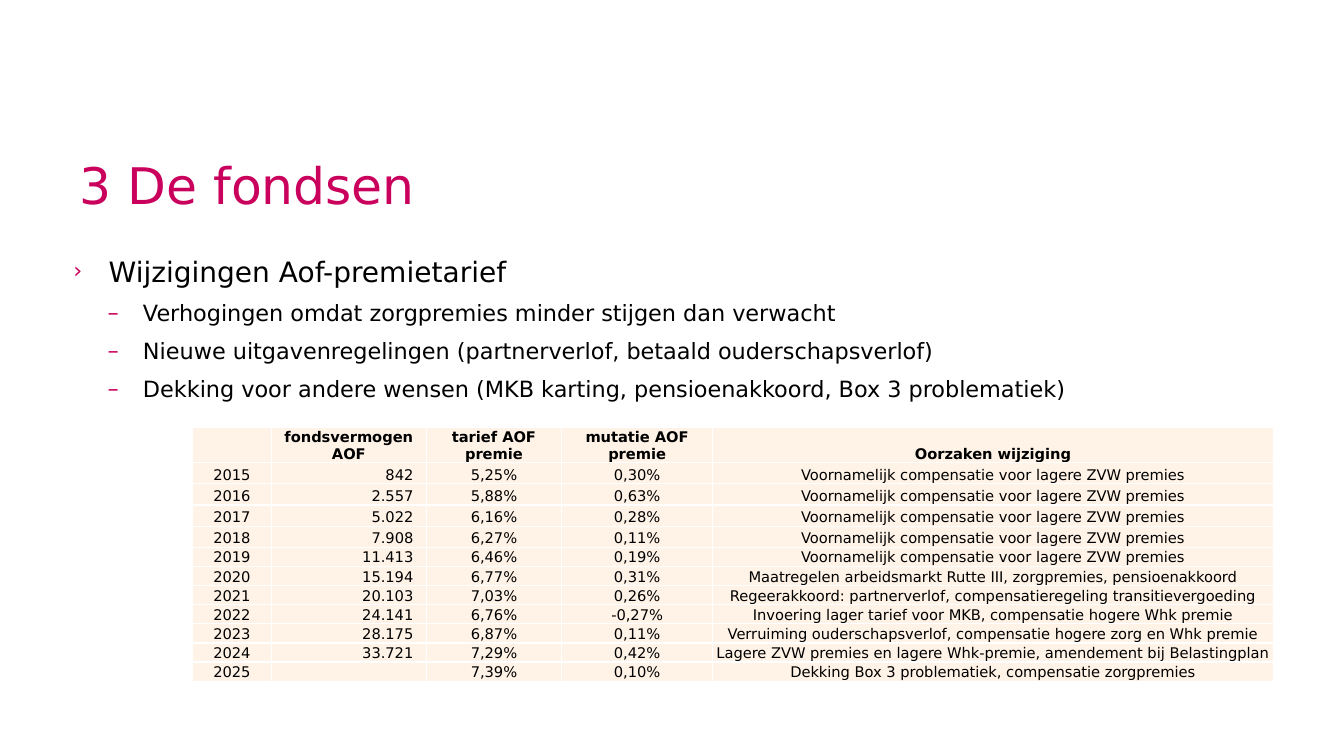
import lxml.etree
import pptx
import pptx.dml.color
import pptx.enum.text
import pptx.oxml.ns
import pptx.util
from pptx.util import Inches

FONT = "DejaVu Sans"
COLORS = {"accent": "CA005D", "text": "000000", "cell": "FFF3E7", "border": "FFFFFF"}
ALIGN = pptx.enum.text.PP_ALIGN
ANCHOR = pptx.enum.text.MSO_ANCHOR

# Text, indent level, size, space before
POINTS = [
    ("Wijzigingen Aof-premietarief", 0, 20, 0),
    ("Verhogingen omdat zorgpremies minder stijgen dan verwacht", 1, 16, 10),
    ("Nieuwe uitgavenregelingen (partnerverlof, betaald ouderschapsverlof)", 1, 16, 10),
    ("Dekking voor andere wensen (MKB karting, pensioenakkoord, Box 3 problematiek)", 1, 16, 10),
]
ZVW = "Voornamelijk compensatie voor lagere ZVW premies"
PREMIUMS = [
    ("", "fondsvermogen AOF", "tarief AOF premie", "mutatie AOF premie", "Oorzaken wijziging"),
    ("2015", "842", "5,25%", "0,30%", ZVW),
    ("2016", "2.557", "5,88%", "0,63%", ZVW),
    ("2017", "5.022", "6,16%", "0,28%", ZVW),
    ("2018", "7.908", "6,27%", "0,11%", ZVW),
    ("2019", "11.413", "6,46%", "0,19%", ZVW),
    ("2020", "15.194", "6,77%", "0,31%",
     "Maatregelen arbeidsmarkt Rutte III, zorgpremies, pensioenakkoord"),
    ("2021", "20.103", "7,03%", "0,26%",
     "Regeerakkoord: partnerverlof, compensatieregeling transitievergoeding"),
    ("2022", "24.141", "6,76%", "-0,27%",
     "Invoering lager tarief voor MKB, compensatie hogere Whk premie"),
    ("2023", "28.175", "6,87%", "0,11%",
     "Verruiming ouderschapsverlof, compensatie hogere zorg en Whk premie"),
    ("2024", "33.721", "7,29%", "0,42%",
     "Lagere ZVW premies en lagere Whk-premie, amendement bij Belastingplan"),
    ("2025", "", "7,39%", "0,10%", "Dekking Box 3 problematiek, compensatie zorgpremies"),
]
COLUMN_WIDTHS = [0.78, 1.54, 1.34, 1.5, 5.56]
ROW_HEIGHTS = [0.34] + [0.21] * 4 + [0.19] * 7
FUND_COLUMN = 1


def rgb(name):
    return pptx.dml.color.RGBColor.from_string(COLORS[name])


def add_xml(parent, tag, **attributes):
    element = lxml.etree.SubElement(parent, pptx.oxml.ns.qn(tag))
    for key, value in attributes.items():
        element.set(key, str(value))
    return element


def add_run(paragraph, text, size, color="text", bold=False):
    run = paragraph.add_run()
    run.text = text
    run.font.name = FONT
    run.font.size = pptx.util.Pt(size)
    run.font.bold = bold
    run.font.color.rgb = rgb(color)


def add_frame(slide, left, top, width, height, anchor):
    box = slide.shapes.add_textbox(Inches(left), Inches(top), Inches(width), Inches(height))
    frame = box.text_frame
    frame.word_wrap = True
    frame.vertical_anchor = anchor
    return frame


def add_title(slide, text):
    paragraph = add_frame(slide, 0.69, 1.15, 11.95, 1.04, ANCHOR.BOTTOM).paragraphs[0]
    paragraph.line_spacing = 0.9
    add_run(paragraph, text, 36, "accent")


def set_bullet(paragraph, level):
    properties = paragraph._p.get_or_add_pPr()
    properties.set("marL", str(Inches(0.35 + 0.34 * level)))
    properties.set("indent", str(Inches(-0.35)))
    color = add_xml(properties, "a:buClr")
    add_xml(color, "a:srgbClr", val=COLORS["accent"])
    add_xml(properties, "a:buSzPct", val=100000 if level else 80000)
    add_xml(properties, "a:buFont", typeface=FONT)
    add_xml(properties, "a:buChar", char="–" if level else "›")


def add_points(slide):
    frame = add_frame(slide, 0.63, 2.51, 12.14, 1.74, ANCHOR.TOP)
    for index, (text, level, size, space) in enumerate(POINTS):
        paragraph = frame.add_paragraph() if index else frame.paragraphs[0]
        paragraph.level = level
        set_bullet(paragraph, level)
        paragraph.line_spacing = 0.9
        paragraph.space_before = pptx.util.Pt(space)
        add_run(paragraph, text, size)


def set_borders(cell):
    """Put the border lines ahead of the fill, as the schema orders them."""
    properties = cell._tc.get_or_add_tcPr()
    for index, side in enumerate(("a:lnL", "a:lnR", "a:lnT", "a:lnB")):
        line = add_xml(properties, side, w=pptx.util.Pt(1))
        add_xml(add_xml(line, "a:solidFill"), "a:srgbClr", val=COLORS["border"])
        properties.insert(index, line)


def fill_cell(cell, text, is_header, is_amount):
    cell.fill.solid()
    cell.fill.fore_color.rgb = rgb("cell")
    set_borders(cell)
    cell.margin_left = cell.margin_right = cell.margin_top = cell.margin_bottom = 0
    cell.vertical_anchor = ANCHOR.BOTTOM
    paragraph = cell.text_frame.paragraphs[0]
    paragraph.alignment = ALIGN.CENTER
    if is_amount:
        paragraph.alignment = ALIGN.RIGHT
        cell.margin_right = Inches(0.13)
    if text:
        add_run(paragraph, text, 10.5, bold=is_header)
    else:
        add_xml(paragraph._p, "a:endParaRPr", sz=1050)


def add_premium_table(slide):
    table = slide.shapes.add_table(
        len(PREMIUMS), len(COLUMN_WIDTHS), Inches(1.91), Inches(4.24),
        Inches(sum(COLUMN_WIDTHS)), Inches(sum(ROW_HEIGHTS))).table
    for column, width in zip(table.columns, COLUMN_WIDTHS):
        column.width = Inches(width)
    for row, height in zip(table.rows, ROW_HEIGHTS):
        row.height = Inches(height)
    for r, values in enumerate(PREMIUMS):
        for c, text in enumerate(values):
            fill_cell(table.cell(r, c), text, r == 0, r > 0 and c == FUND_COLUMN)


def main():
    presentation = pptx.Presentation()
    presentation.slide_width = Inches(13.33)
    presentation.slide_height = Inches(7.5)
    slide = presentation.slides.add_slide(presentation.slide_layouts[6])
    add_title(slide, "3 De fondsen")
    add_points(slide)
    add_premium_table(slide)
    presentation.save("out.pptx")


if __name__ == "__main__":
    main()
